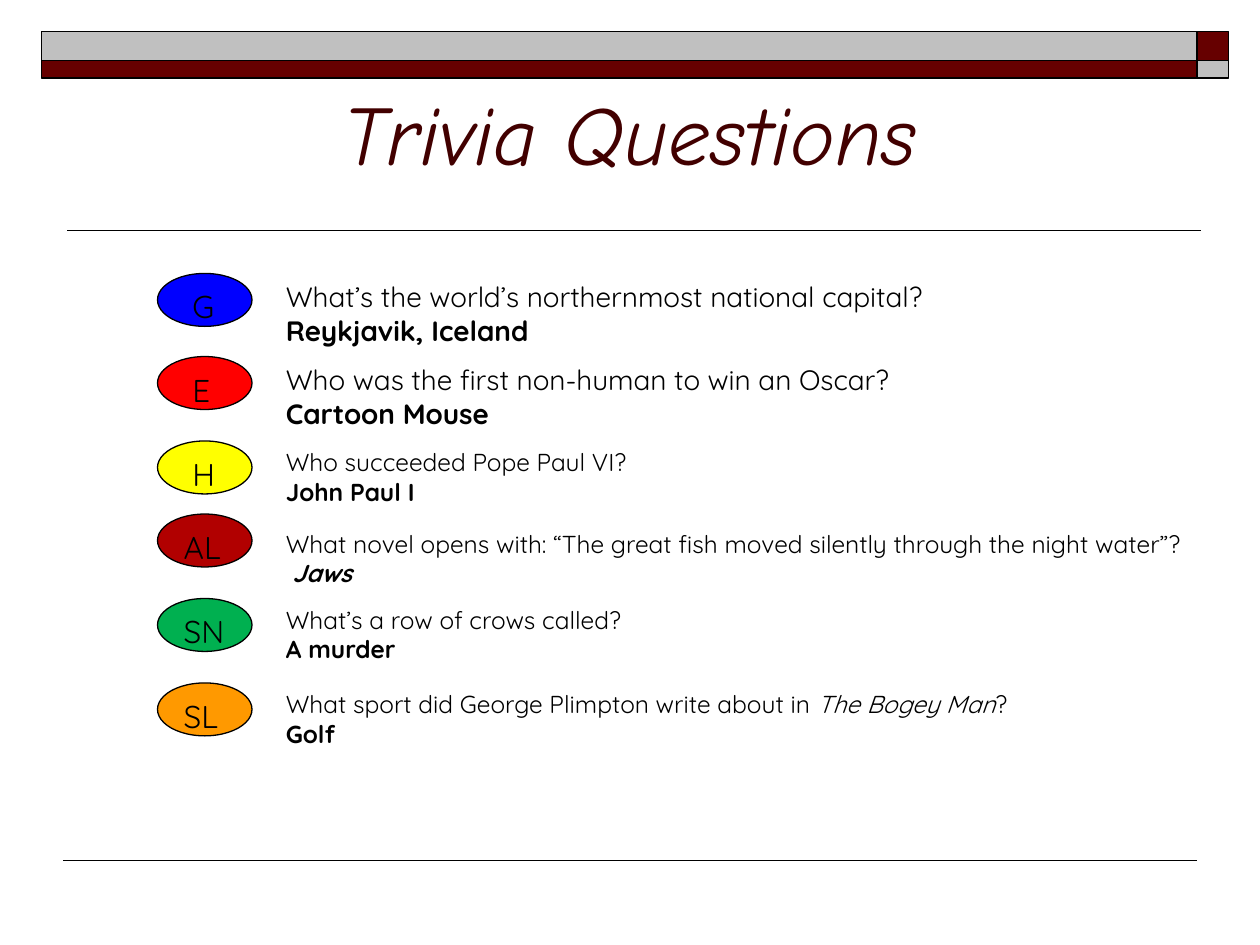
from pptx import Presentation
from pptx.dml.color import RGBColor
from pptx.enum.shapes import MSO_CONNECTOR, MSO_SHAPE
from pptx.enum.text import MSO_ANCHOR, PP_ALIGN
from pptx.oxml.ns import qn
from pptx.util import Inches, Pt

BLACK = RGBColor(0, 0, 0)
MAROON = RGBColor(0x66, 0, 0)
SILVER = RGBColor(0xC0, 0xC0, 0xC0)
WINE = RGBColor(0x42, 0, 0)
BLUE = RGBColor(0, 0, 0xFF)
RED = RGBColor(0xFF, 0, 0)
YELLOW = RGBColor(0xFF, 0xFF, 0)
BRICK = RGBColor(0xB1, 0, 0)
GREEN = RGBColor(0, 0xB0, 0x50)
ORANGE = RGBColor(0xFF, 0x99, 0)


def write(par, text, size, font="Quicksand", color=BLACK, bold=False, italic=False):
    run = par.add_run()
    run.text = text
    run.font.size = Pt(size)
    run.font.name = font
    run.font.color.rgb = color
    run.font.bold = bold
    run.font.italic = italic


def draw(kind, left, top, width, height, fill, line):
    shape = slide.shapes.add_shape(
        kind, Inches(left), Inches(top), Inches(width), Inches(height))
    shape.shadow.inherit = False
    shape.fill.solid()
    shape.fill.fore_color.rgb = fill
    shape.line.color.rgb = BLACK
    shape.line.width = Pt(line)
    return shape


deck = Presentation()
deck.slide_width = Inches(10)
deck.slide_height = Inches(7.5)
slide = deck.slides.add_slide(deck.slide_layouts[6])

for left, top, width, height, fill in [
    (9.5, 0.25, 0.25, 0.23, MAROON),
    (0.33, 0.25, 9.17, 0.23, SILVER),
    (0.33, 0.48, 9.17, 0.14, MAROON),
    (9.5, 0.48, 0.25, 0.14, SILVER),
]:
    draw(MSO_SHAPE.RECTANGLE, left, top, width, height, fill, 1)

for start, end, y, weight in [(9.53, 0.53, 1.83, 1), (0.5, 9.5, 6.83, 0.75)]:
    rule = slide.shapes.add_connector(
        MSO_CONNECTOR.STRAIGHT, Inches(start), Inches(y), Inches(end), Inches(y))
    rule.line.color.rgb = BLACK
    rule.line.width = Pt(weight)
    props = rule._element.spPr
    props.append(props.makeelement(qn("a:effectLst"), {}))

title = slide.shapes.add_textbox(Inches(0.5), Inches(0.25), Inches(9), Inches(1.25))
frame = title.text_frame
frame.word_wrap = True
frame.vertical_anchor = MSO_ANCHOR.BOTTOM
frame.paragraphs[0].alignment = PP_ALIGN.CENTER
write(frame.paragraphs[0], "Trivia Questions", 48, font="Comic Neue", color=WINE, italic=True)

PLAIN, BOLD, SLANT = {}, {"bold": True}, {"italic": True}
rows = [
    (" G", BLUE, 2.17, 2.17, 6.5, 16,
     [("What’s the world’s northernmost national capital?", PLAIN)],
     [("Reykjavik, Iceland", BOLD)]),
    (" E", RED, 2.83, 2.83, 6.92, 16,
     [("Who was the first non-human to win an Oscar?", PLAIN)],
     [("Cartoon Mouse", BOLD)]),
    (" H", YELLOW, 3.5, 3.5, 5.5, 14,
     [("Who succeeded Pope Paul VI?", PLAIN)],
     [("John Paul I", BOLD)]),
    ("AL", BRICK, 4.08, 4.15, 7.83, 14,
     [("What novel opens with: “The great fish moved silently through the night water”?", PLAIN)],
     [(" ", PLAIN), ("Jaws", BOLD | SLANT)]),
    ("SN", GREEN, 4.75, 4.75, 6.5, 14,
     [("What’s a row of crows called?", PLAIN)],
     [("A murder", BOLD)]),
    ("SL", ORANGE, 5.42, 5.42, 7.17, 14,
     [("What sport did George Plimpton write about in ", PLAIN),
      ("The Bogey Man", SLANT), ("?", PLAIN)],
     [("Golf", BOLD)]),
]

for code, fill, y, top, width, size, query, reply in rows:
    badge = draw(MSO_SHAPE.OVAL, 1.25, y, 0.75, 0.42, fill, 0.75)
    frame = badge.text_frame
    frame.vertical_anchor = MSO_ANCHOR.TOP
    frame.paragraphs[0].alignment = PP_ALIGN.LEFT
    write(frame.paragraphs[0], code, 18)

    height = 0.64 if size == 16 else 0.57
    box = slide.shapes.add_textbox(Inches(2.17), Inches(top), Inches(width), Inches(height))
    frame = box.text_frame
    frame.word_wrap = True
    for par, parts in [(frame.paragraphs[0], query), (frame.add_paragraph(), reply)]:
        for text, style in parts:
            write(par, text, size, **style)

deck.save("out.pptx")
